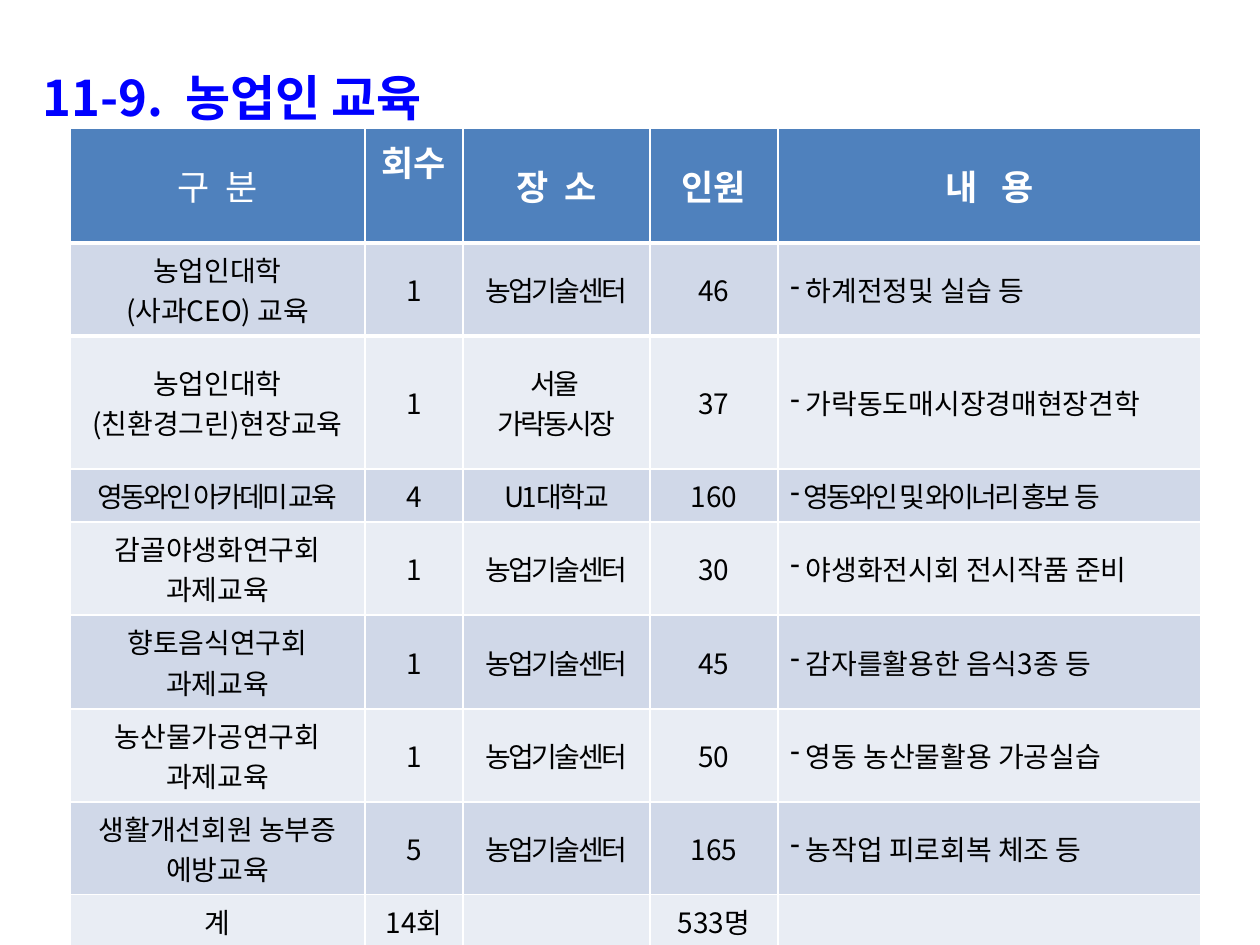
from dataclasses import dataclass

import pptx
import pptx.dml.color
import pptx.enum.text
import pptx.oxml.ns
import pptx.util
from lxml import etree

TITLE = "11-9.  농업인 교육"
HEADERS = ["구  분", "회수", "장  소", "인원", "내   용"]
CENTER = "농업기술센터"
ROWS = [
    ("농업인대학\n(사과CEO) 교육", "1", CENTER, "46", " 하계전정및 실습 등"),
    ("농업인대학\n(친환경그린)현장교육", "1", "서울 \n가락동시장", "37", " 가락동도매시장경매현장견학"),
    ("영동와인 아카데미 교육", "4", "U1대학교", "160", " 영동와인 및 와이너리 홍보  등"),
    ("감골야생화연구회\n과제교육", "1", CENTER, "30", " 야생화전시회 전시작품 준비"),
    ("향토음식연구회\n과제교육", "1", CENTER, "45", " 감자를활용한 음식3종 등"),
    ("농산물가공연구회\n과제교육", "1", CENTER, "50", " 영동 농산물활용 가공실습"),
    ("생활개선회원 농부증 에방교육", "5", CENTER, "165", " 농작업 피로회복 체조 등"),
    ("계", "14회", "", "533명", ""),
]
COLUMN_WIDTHS = [295, 98, 187, 128, 423]
ROW_HEIGHTS = [115, 93, 133, 53, 93, 94, 93, 93, 53]
COUNT, PLACE, CONTENT = 1, 2, 4
TIGHT_CELLS = {(3, 0), (3, CONTENT)}
COUNT_LIFT = 50  # px of extra room below the count heading


@dataclass(frozen=True)
class Theme:
    font: str = "Noto Sans CJK KR"
    title: str = "0000FF"
    header: str = "4F81BD"
    header_text: str = "FFFFFF"
    border: str = "FFFFFF"
    text: str = "000000"
    bands: tuple = ("E9EDF4", "D0D8E8")
    title_size: int = 28
    header_size: int = 20
    body_size: int = 16
    header_border: int = 3
    tight: int = -150  # hundredths of a point


THEME = Theme()
qn = pptx.oxml.ns.qn


def px(count):
    return pptx.util.Emu(count * 914400 // 126)


def rgb(value):
    return pptx.dml.color.RGBColor.from_string(value)


def style(para, size, color, bold=False, tight=False, bullet=""):
    """Set the paragraph font, with its East Asian face, spacing and bullet."""
    para.font.size = pptx.util.Pt(size)
    para.font.bold = bold
    para.font.color.rgb = rgb(color)
    para.font.name = THEME.font
    defaults = para._p.pPr.find(qn("a:defRPr"))
    etree.SubElement(defaults, qn("a:ea"), typeface=THEME.font)
    if tight:
        defaults.set("spc", str(THEME.tight))
    if bullet:
        defaults.addprevious(etree.Element(qn("a:buFontTx")))
        defaults.addprevious(etree.Element(qn("a:buChar"), char=bullet))


def write_cell(cell, text, background, centered=True, **font):
    cell.fill.solid()
    cell.fill.fore_color.rgb = rgb(background)
    cell.vertical_anchor = pptx.enum.text.MSO_ANCHOR.MIDDLE
    cell.text_frame.text = text
    for para in cell.text_frame.paragraphs:
        if centered:
            para.alignment = pptx.enum.text.PP_ALIGN.CENTER
        style(para, **font)


def add_border(cell, side):
    line = etree.Element(qn(f"a:{side}"), w=str(pptx.util.Pt(THEME.header_border)))
    fill = etree.SubElement(line, qn("a:solidFill"))
    etree.SubElement(fill, qn("a:srgbClr"), val=THEME.border)
    cell._tc.get_or_add_tcPr().insert(0, line)


def add_title(page):
    box = page.shapes.add_textbox(px(30), px(50), px(1191), px(82))
    box.text_frame.word_wrap = False
    para = box.text_frame.paragraphs[0]
    para.text = TITLE
    para.line_spacing = 1.2
    style(para, THEME.title_size, THEME.title, bold=True)
    para._p.pPr.set("marL", str(px(73)))
    para._p.pPr.set("indent", str(-px(73)))


def add_training_table(page):
    table = page.shapes.add_table(
        len(ROW_HEIGHTS), len(COLUMN_WIDTHS), px(70), px(128),
        px(sum(COLUMN_WIDTHS)), px(sum(ROW_HEIGHTS))).table
    for column, width in zip(table.columns, COLUMN_WIDTHS):
        column.width = px(width)
    for row, height in zip(table.rows, ROW_HEIGHTS):
        row.height = px(height)

    for c, text in enumerate(HEADERS):
        write_cell(table.cell(0, c), text, THEME.header,
                   size=THEME.header_size, color=THEME.header_text, bold=c > 0)
        add_border(table.cell(0, c), "lnB")
        add_border(table.cell(1, c), "lnT")
    table.cell(0, COUNT).margin_bottom = px(6 + COUNT_LIFT)

    for r, values in enumerate(ROWS, start=1):
        for c, text in enumerate(values):
            write_cell(table.cell(r, c), text, THEME.bands[r % 2], c != CONTENT,
                       size=THEME.body_size, color=THEME.text,
                       tight=c == PLACE or (r, c) in TIGHT_CELLS,
                       bullet="-" if c == CONTENT and text else "")


def main():
    deck = pptx.Presentation()
    deck.slide_width, deck.slide_height = px(1260), px(945)
    page = deck.slides.add_slide(deck.slide_layouts[6])
    add_title(page)
    add_training_table(page)
    deck.save("out.pptx")


if __name__ == "__main__":
    main()
